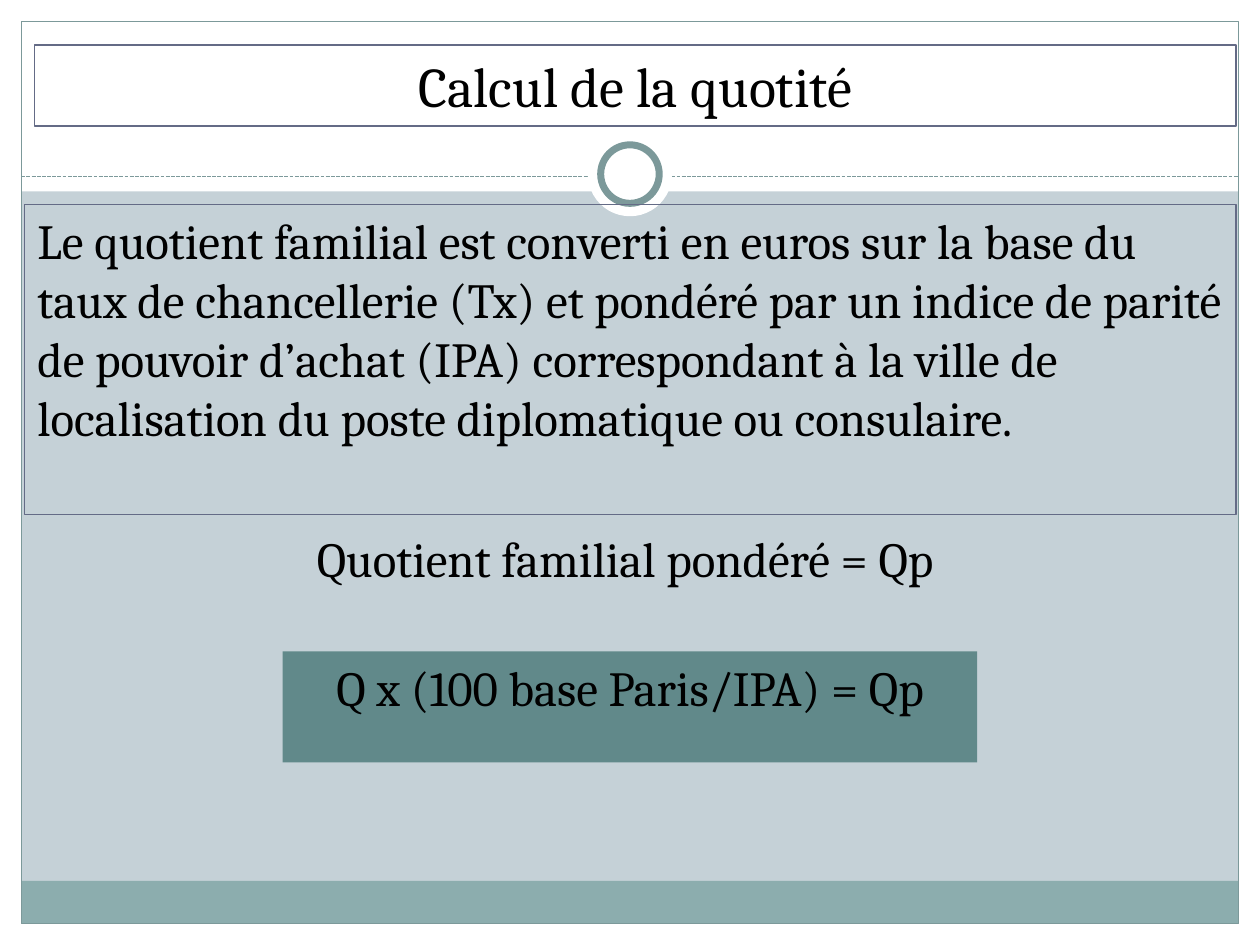
from lxml import etree
from pptx import Presentation
from pptx.dml.color import RGBColor
from pptx.enum import dml, shapes, text
from pptx.oxml import ns
from pptx.util import Cm, Pt

BLACK = RGBColor(0x00, 0x00, 0x00)
WHITE = RGBColor(0xFF, 0xFF, 0xFF)
BACKGROUND = RGBColor(0xC5, 0xD1, 0xD7)
FOOTER = RGBColor(0x8C, 0xAD, 0xAE)
FRAME = RGBColor(0x7C, 0x99, 0x9A)
OUTLINE = RGBColor(0x64, 0x6B, 0x86)
FORMULA = RGBColor(0x61, 0x89, 0x8A)
FONT = "Cambria"

TITLE = "Calcul de la quotité"
BODY = (
    "Le quotient familial est converti en euros sur la base du taux de "
    "chancellerie (Tx) et pondéré par un indice de parité de pouvoir d’achat "
    "(IPA) correspondant à la ville de localisation du poste diplomatique ou "
    "consulaire."
)
DEFINITION = "Quotient familial pondéré = Qp "
EQUATION = "Q x (100 base Paris/IPA) = Qp"

# Centimetres
WIDTH, HEIGHT = 25.4, 19.05
MARGIN = 0.43
HEADER = 3.86
RULE_Y = 3.56
RING_Y = 3.51
FOOTER_HEIGHT = 0.86

RECTANGLE = shapes.MSO_SHAPE.RECTANGLE
OVAL = shapes.MSO_SHAPE.OVAL
LEFT, CENTER = text.PP_ALIGN.LEFT, text.PP_ALIGN.CENTER


def place(shape, left, top, width, height):
    shape.left, shape.top = Cm(left), Cm(top)
    shape.width, shape.height = Cm(width), Cm(height)


def add_shape(slide, kind, box, fill=None, line=None, weight=0.75):
    shape = slide.shapes.add_shape(kind, *map(Cm, box))
    shape.shadow.inherit = False
    if fill is None:
        shape.fill.background()
    else:
        shape.fill.solid()
        shape.fill.fore_color.rgb = fill
    if line is None:
        shape.line.fill.background()
    else:
        shape.line.color.rgb = line
        shape.line.width = Pt(weight)
    return shape


def add_disc(slide, diameter, **style):
    """Draw a white disc centred on the header rule."""
    box = ((WIDTH - diameter) / 2, RING_Y - diameter / 2, diameter, diameter)
    add_shape(slide, OVAL, box, WHITE, **style)


def write(shape, words, size, alignment):
    frame = shape.text_frame
    frame.text = words
    frame.word_wrap = True
    frame.auto_size = text.MSO_AUTO_SIZE.NONE
    frame.vertical_anchor = text.MSO_ANCHOR.TOP
    paragraph = frame.paragraphs[0]
    paragraph.alignment = alignment
    paragraph.space_before = Pt(0)
    paragraph.font.size = Pt(size)
    paragraph.font.name = FONT
    paragraph.font.color.rgb = BLACK
    return paragraph


def draw_backdrop(slide):
    slide.background.fill.solid()
    slide.background.fill.fore_color.rgb = BACKGROUND
    inner_width, inner_height = WIDTH - 2 * MARGIN, HEIGHT - 2 * MARGIN
    for box in (
        (0, HEIGHT - MARGIN, WIDTH, MARGIN),
        (0, 0, WIDTH, HEADER),
        (0, 0, MARGIN, HEIGHT),
        (WIDTH - MARGIN, 0, MARGIN, HEIGHT),
    ):
        add_shape(slide, RECTANGLE, box, WHITE)
    footer_top = HEIGHT - MARGIN - FOOTER_HEIGHT
    add_shape(slide, RECTANGLE, (MARGIN, footer_top, inner_width, FOOTER_HEIGHT), FOOTER)
    add_shape(slide, RECTANGLE, (MARGIN, MARGIN, inner_width, inner_height), line=FRAME)

    rule = slide.shapes.add_connector(
        shapes.MSO_CONNECTOR.STRAIGHT,
        Cm(MARGIN), Cm(RULE_Y), Cm(WIDTH - MARGIN), Cm(RULE_Y),
    )
    rule.line.color.rgb = FRAME
    rule.line.width = Pt(0.75)
    rule.line.dash_style = dml.MSO_LINE.SQUARE_DOT
    etree.SubElement(rule._element.spPr, ns.qn("a:effectLst"))

    add_disc(slide, 1.7)
    add_disc(slide, 1.18, line=FRAME, weight=4)


def fill_placeholder(placeholder, box, words, size, alignment):
    """Outline and fill a placeholder, in front of what is already drawn."""
    element = placeholder._element
    element.getparent().append(element)
    place(placeholder, *box)
    placeholder.line.color.rgb = OUTLINE
    placeholder.line.width = Pt(0.75)
    return write(placeholder, words, size, alignment)


def main():
    presentation = Presentation()
    presentation.slide_width, presentation.slide_height = Cm(WIDTH), Cm(HEIGHT)
    slide = presentation.slides.add_slide(presentation.slide_layouts[1])
    draw_backdrop(slide)

    paragraph = fill_placeholder(
        slide.placeholders[1], (0.5, 4.12, 24.42, 6.25), BODY, 28, LEFT
    )
    properties = paragraph._p.get_or_add_pPr()
    properties.set("marL", "0")
    properties.set("indent", "0")
    bullet = etree.Element(ns.qn("a:buNone"))
    properties.find(ns.qn("a:defRPr")).addprevious(bullet)

    fill_placeholder(slide.shapes.title, (0.7, 0.91, 24.22, 1.63), TITLE, 32, CENTER)

    definition = slide.shapes.add_textbox(Cm(0.5), Cm(10.52), Cm(24.42), Cm(1.45))
    write(definition, DEFINITION, 28, CENTER)

    equation = add_shape(slide, RECTANGLE, (5.7, 13.13, 14, 2.24), FORMULA)
    write(equation, EQUATION, 28, CENTER)

    presentation.save("out.pptx")


if __name__ == "__main__":
    main()
